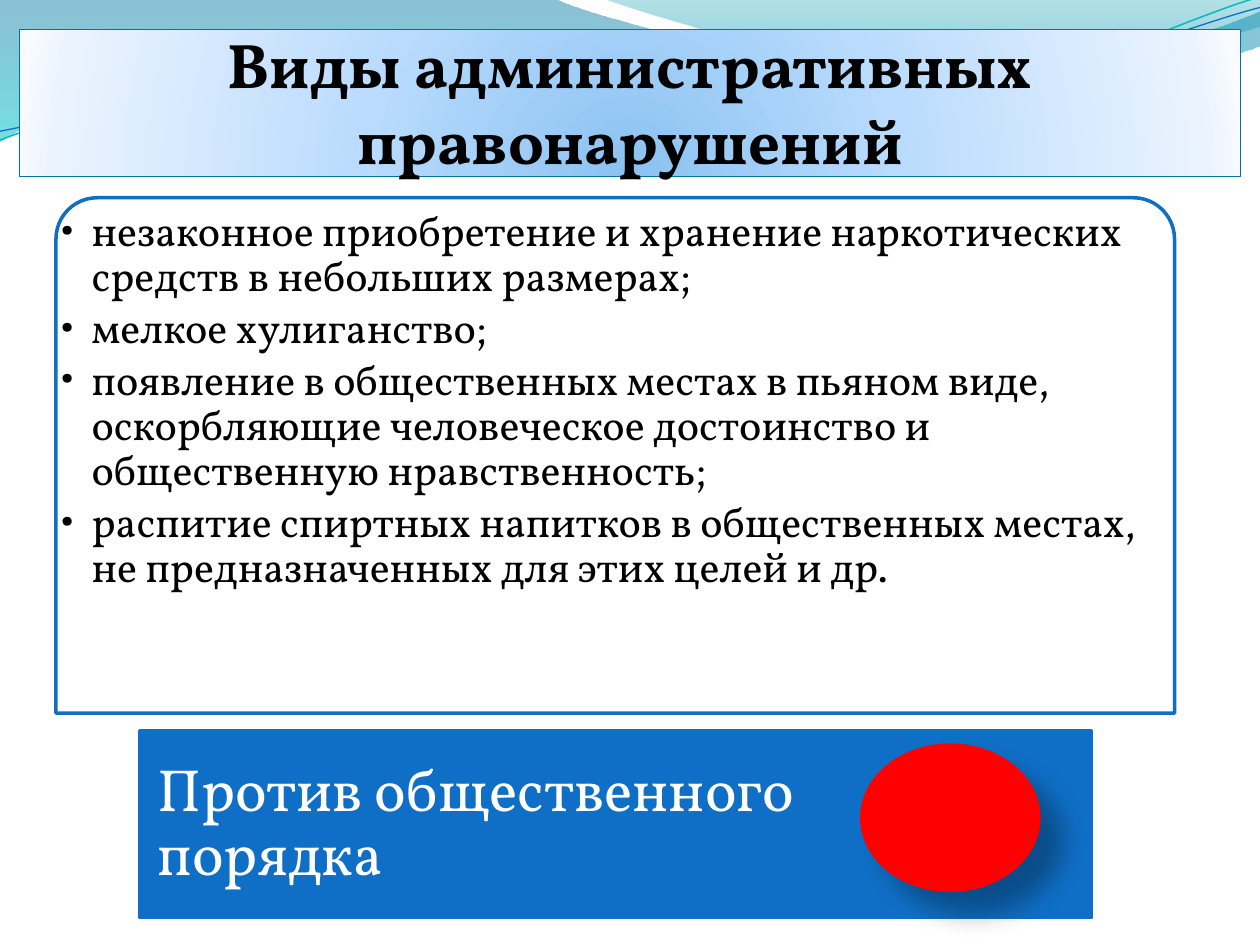
from pptx import Presentation, util as u
from pptx.dml.color import RGBColor
from pptx.enum import shapes, text
from pptx.oxml import parse_xml
from pptx.oxml.ns import qn

Pt = u.Pt
NAMESPACE = 'xmlns:a="http://schemas.openxmlformats.org/drawingml/2006/main"'
FONT, BLUE = "Vollkorn", "0F6FC6"

# Content
TITLE = "Виды административных правонарушений"
OFFENCES = [
    "незаконное приобретение и хранение наркотических средств в небольших размерах;",
    "мелкое хулиганство;",
    "появление в общественных местах в пьяном виде, оскорбляющие человеческое "
    "достоинство и общественную нравственность;",
    "распитие спиртных напитков в общественных местах, не предназначенных для этих целей и др.",
]
CATEGORY = "Против общественного порядка"

# Waves: start point, then segments of one end point (line) or three points (curve)
LINEAR = '<a:lin ang="5400000" scaled="0"/>'
RADIAL = ('<a:path path="circle"><a:fillToRect l="50000" t="130000" '
          'r="50000" b="-30000"/></a:path>')
WAVES = [
    dict(start=(0, 0), stops=[(0, "0074A1", 45), (100, "00C6CF", 55)], segments=[
        [(317, -0.7)],
        [(343, 12), (478, 45), (546, 45)],
        [(614, 45), (690, 19), (720, 6.5)],
        [(720.7, 26)],
        [(708, 32), (626, 55), (537, 54)],
        [(448, 54), (275, 20), (185, 24.5)],
        [(93, 26), (33, 60), (-0.7, 81.4)],
        [(0, 0)]]),
    dict(start=(345, -0.7), stops=[(0, "00A1A9", 30), (80, "008BBF", 45)], segments=[
        [(366.5, 8), (491, 44.6), (553.7, 46.8)],
        [(616, 49.7), (692, 23), (720, 15)],
        [(720, 0)],
        [(345, -0.7)]]),
    dict(start=(0, 80), line="0AB8BF", width=0.85, segments=[
        [(34.6, 67), (113.8, 41), (199.4, 37.4)],
        [(284.4, 33.8), (427, 64), (513.4, 57.6)],
        [(599.8, 51), (675.4, 10.8), (718.6, -1.4)]]),
    dict(start=(0, 75), line=BLUE, width=0.75, segments=[
        [(33.8, 69), (118, 44), (203.8, 40.3)],
        [(290, 36.7), (429.8, 60.5), (516.2, 54)],
        [(602, 48.2), (677.5, 15), (720, 4.3)]]),
]

# Boxes: left, top, width, height
TITLE_BOX = (11.2, 16.8, 697.7, 84.2)
LIST_BOX = (32, 113, 639.2, 294.5)
BAND_BOX = (80, 417.8, 543.6, 106.6)
CATEGORY_BOX = (80, 417.8, 383, 106.6)
CIRCLE_BOX = (491.4, 424.8, 103.2, 85)


def color(value):
    return RGBColor.from_string(value)


def color_xml(value, alpha):
    return f'<a:srgbClr val="{value}"><a:alpha val="{alpha * 1000}"/></a:srgbClr>'


def set_gradient(shape, stops, direction):
    """Fill with stops of (position, colour, opacity)."""
    shape.fill.solid()
    stop_xml = "".join(f'<a:gs pos="{position * 1000}">{color_xml(value, alpha)}</a:gs>'
                       for position, value, alpha in stops)
    gradient = parse_xml(f'<a:gradFill {NAMESPACE} rotWithShape="1">'
                         f'<a:gsLst>{stop_xml}</a:gsLst>{direction}</a:gradFill>')
    properties = shape._element.spPr
    properties.replace(properties.find(qn("a:solidFill")), gradient)


def set_shadow(shape, value, alpha, blur, distance, angle):
    effects = shape._element.spPr.find(qn("a:effectLst"))
    effects.append(parse_xml(
        f'<a:outerShdw {NAMESPACE} blurRad="{Pt(blur)}" dist="{Pt(distance)}" '
        f'dir="{angle * 60000}" algn="ctr" rotWithShape="0">'
        f'{color_xml(value, alpha)}</a:outerShdw>'))


def style(shape, fill=None, line=None, width=1):
    shape.shadow.inherit = False
    if fill:
        shape.fill.solid()
        shape.fill.fore_color.rgb = color(fill)
    else:
        shape.fill.background()
    if line:
        shape.line.color.rgb = color(line)
        shape.line.width = Pt(width)
    else:
        shape.line.fill.background()
    return shape


def add_box(slide, kind, box, **look):
    return style(slide.shapes.add_shape(kind, *map(Pt, box)), **look)


def add_wave(slide, start, segments, stops=None, line=None, width=1):
    points = [(Pt(x), Pt(y)) for segment in segments for x, y in segment]
    builder = slide.shapes.build_freeform(Pt(start[0]), Pt(start[1]), scale=1.0)
    builder.add_line_segments(points, close=bool(stops))
    wave = style(builder.convert_to_shape(), line=line, width=width)

    # Join each run of three points into one Bézier curve
    steps = iter(list(wave._element.spPr.iter(qn("a:lnTo"))))
    for segment in segments:
        nodes = [next(steps) for _ in segment]
        if len(nodes) == 3:
            curve = parse_xml(f"<a:cubicBezTo {NAMESPACE}/>")
            nodes[0].addprevious(curve)
            for node in nodes:
                curve.append(node[0])
                node.getparent().remove(node)
    if stops:
        set_gradient(wave, stops, LINEAR)


def write(shape, lines, margins, anchor, paragraph_format, font_format, bullet=False):
    frame = shape.text_frame
    frame.word_wrap = True
    frame.vertical_anchor = anchor
    for side, margin in zip(("left", "top", "right", "bottom"), margins):
        setattr(frame, f"margin_{side}", Pt(margin))
    for index, line in enumerate(lines):
        paragraph = frame.add_paragraph() if index else frame.paragraphs[0]
        for name, value in paragraph_format.items():
            setattr(paragraph, name, value)
        run = paragraph.add_run()
        run.text = line
        for name, value in font_format.items():
            if name == "color":
                run.font.color.rgb = color(value)
            else:
                setattr(run.font, name, value)
        if bullet:
            properties = paragraph._p.get_or_add_pPr()
            properties.set("marL", str(Pt(18)))
            properties.set("indent", str(-Pt(18)))
            properties.append(parse_xml(f'<a:buFont {NAMESPACE} typeface="{FONT}"/>'))
            properties.append(parse_xml(f'<a:buChar {NAMESPACE} char="•"/>'))


def main():
    presentation = Presentation()
    presentation.slide_width, presentation.slide_height = Pt(720), Pt(540)
    slide = presentation.slides.add_slide(presentation.slide_layouts[6])
    kinds, anchors, align = shapes.MSO_SHAPE, text.MSO_ANCHOR, text.PP_ALIGN

    # Background waves
    for wave in WAVES:
        add_wave(slide, **wave)

    # Title
    title = add_box(slide, kinds.RECTANGLE, TITLE_BOX, line="0074A1", width=0.75)
    set_gradient(title, [(0, "8BC2F1", 100), (43, "B9DBFD", 100),
                         (93, "EAF3FE", 100), (100, "F8FBFF", 100)], RADIAL)
    write(title, [TITLE], (0, 3.6, 0, 0), anchors.BOTTOM, dict(alignment=align.CENTER),
          dict(name=FONT, size=Pt(36), bold=True, color="000000"))

    # List of offences
    panel = add_box(slide, kinds.ROUND_2_SAME_RECTANGLE, LIST_BOX,
                    fill="FFFFFF", line=BLUE, width=2)
    panel.adjustments[0], panel.adjustments[1] = 0.08, 0
    write(slide.shapes.add_textbox(*map(Pt, LIST_BOX)), OFFENCES, (2.4, 7.2, 2.4, 2.4),
          anchors.TOP, dict(alignment=align.LEFT, line_spacing=0.9, space_after=Pt(3.6)),
          dict(name=FONT, size=Pt(24), color="000000"), bullet=True)

    # Category band with circle
    add_box(slide, kinds.RECTANGLE, BAND_BOX, fill=BLUE, line=BLUE, width=2)
    write(slide.shapes.add_textbox(*map(Pt, CATEGORY_BOX)), [CATEGORY], (10.1, 0, 3.6, 0),
          anchors.MIDDLE, dict(alignment=align.LEFT, line_spacing=0.9),
          dict(name=FONT, size=Pt(34), color="FFFFFF"))
    circle = add_box(slide, kinds.OVAL, CIRCLE_BOX, fill="FF0000")
    set_shadow(circle, "000000", 30, 15, 18, 45)

    presentation.save("out.pptx")


if __name__ == "__main__":
    main()
